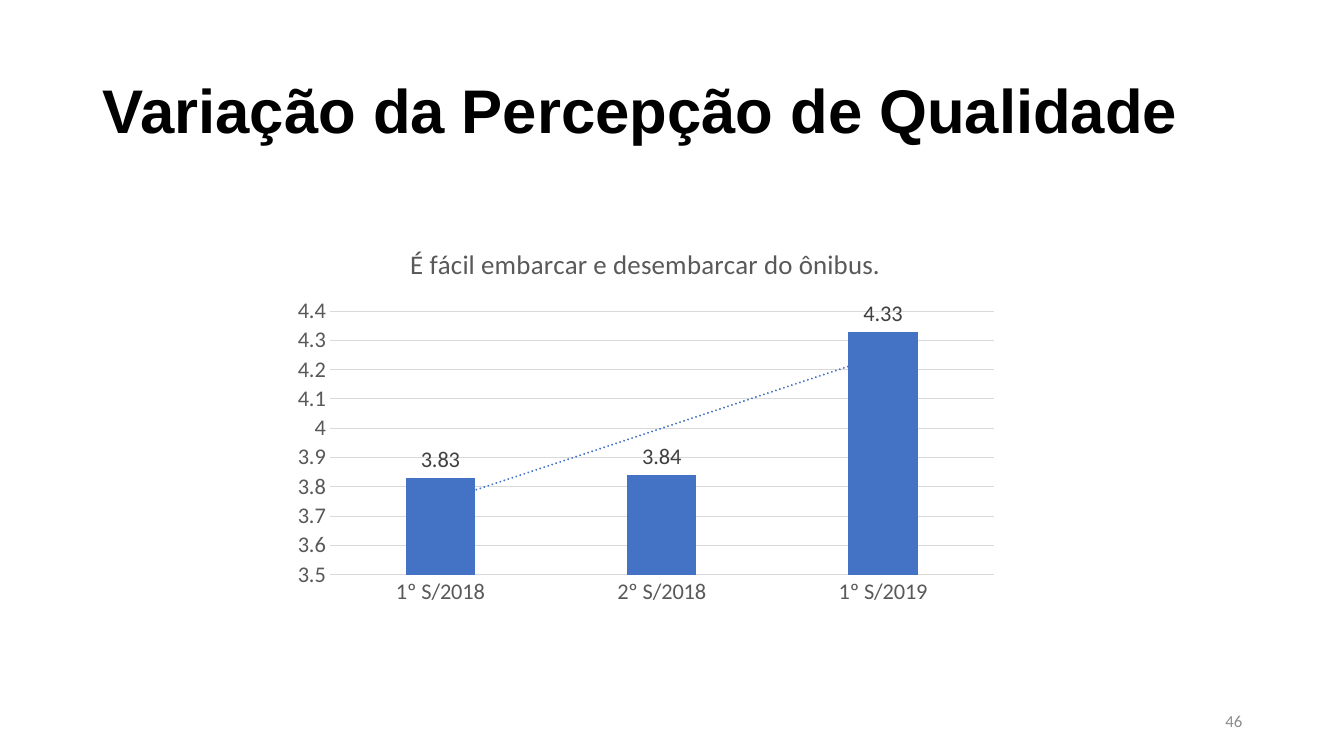
from lxml.etree import fromstring
from pptx import Presentation
from pptx.chart.data import CategoryChartData
from pptx.dml.color import RGBColor
from pptx.enum.chart import XL_CHART_TYPE, XL_LABEL_POSITION, XL_TICK_MARK
from pptx.enum.text import MSO_ANCHOR, PP_ALIGN
from pptx.util import Inches, Pt

BLACK = RGBColor(0x00, 0x00, 0x00)
DARK = RGBColor(0x40, 0x40, 0x40)
GRAY = RGBColor(0x59, 0x59, 0x59)
PALE = RGBColor(0x8C, 0x8C, 0x8C)
GRID = RGBColor(0xD9, 0xD9, 0xD9)
BLUE = RGBColor(0x44, 0x72, 0xC4)


def style(font, size, color, name="Calibri", bold=False):
    font.name = name
    font.size = Pt(size)
    font.bold = bold
    font.color.rgb = color


def add_text(text, left, top, width, height):
    box = slide.shapes.add_textbox(Inches(left), Inches(top), Inches(width), Inches(height))
    frame = box.text_frame
    frame.word_wrap = True
    frame.vertical_anchor = MSO_ANCHOR.MIDDLE
    frame.text = text
    return frame.paragraphs[0]


deck = Presentation()
deck.slide_width = Inches(13.33)
deck.slide_height = Inches(7.5)
slide = deck.slides.add_slide(deck.slide_layouts[6])

# Title
title = add_text("Variação da Percepção de Qualidade", 0.92, 0.4, 11.5, 1.45)
title.line_spacing = 0.9
style(title.font, 44, BLACK, "Arial", True)

# Page number
page = add_text("46", 9.42, 6.95, 3, 0.4)
page.alignment = PP_ALIGN.RIGHT
style(page.font, 12, PALE)

# Chart
claim = "É fácil embarcar e desembarcar do ônibus."
data = CategoryChartData()
data.categories = ["1º S/2018", "2º S/2018", "1º S/2019"]
data.add_series(claim, [3.83, 3.84, 4.33])
chart = slide.shapes.add_chart(
    XL_CHART_TYPE.COLUMN_CLUSTERED,
    Inches(2.81), Inches(2.25), Inches(7.19), Inches(3.84), data).chart
style(chart.font, 16, BLACK)
chart.has_legend = False
chart.has_title = True
chart.chart_title.text_frame.text = claim
style(chart.chart_title.text_frame.paragraphs[0].font, 19.2, GRAY)

# Axes
for axis in (chart.category_axis, chart.value_axis):
    axis.major_tick_mark = XL_TICK_MARK.NONE
    axis.minor_tick_mark = XL_TICK_MARK.NONE
    style(axis.tick_labels.font, 16, GRAY)
scale = chart.value_axis
scale.minimum_scale = 3.5
scale.maximum_scale = 4.4
scale.major_unit = 0.1
scale.format.line.fill.background()
for line in (chart.category_axis.format.line, scale.major_gridlines.format.line):
    line.color.rgb = GRID
    line.width = Pt(0.75)

# Columns and labels
plot = chart.plots[0]
plot.gap_width = 219
plot.overlap = -27
plot.vary_by_categories = False
bars = plot.series[0]
bars.format.fill.solid()
bars.format.fill.fore_color.rgb = BLUE
bars.invert_if_negative = False
labels = bars.data_labels
labels.show_value = True
labels.position = XL_LABEL_POSITION.OUTSIDE_END
style(labels.font, 16, DARK)

# Linear trend line
trend = fromstring(f"""
<c:trendline xmlns:c="http://schemas.openxmlformats.org/drawingml/2006/chart"
             xmlns:a="http://schemas.openxmlformats.org/drawingml/2006/main">
  <c:spPr><a:ln w="{Pt(1.5)}" cap="rnd">
    <a:solidFill><a:srgbClr val="{BLUE}"/></a:solidFill>
    <a:prstDash val="sysDot"/>
  </a:ln></c:spPr>
  <c:trendlineType val="linear"/>
  <c:dispRSqr val="0"/>
  <c:dispEq val="0"/>
</c:trendline>""")
bars._element.xpath("c:cat")[0].addprevious(trend)

deck.save("out.pptx")
